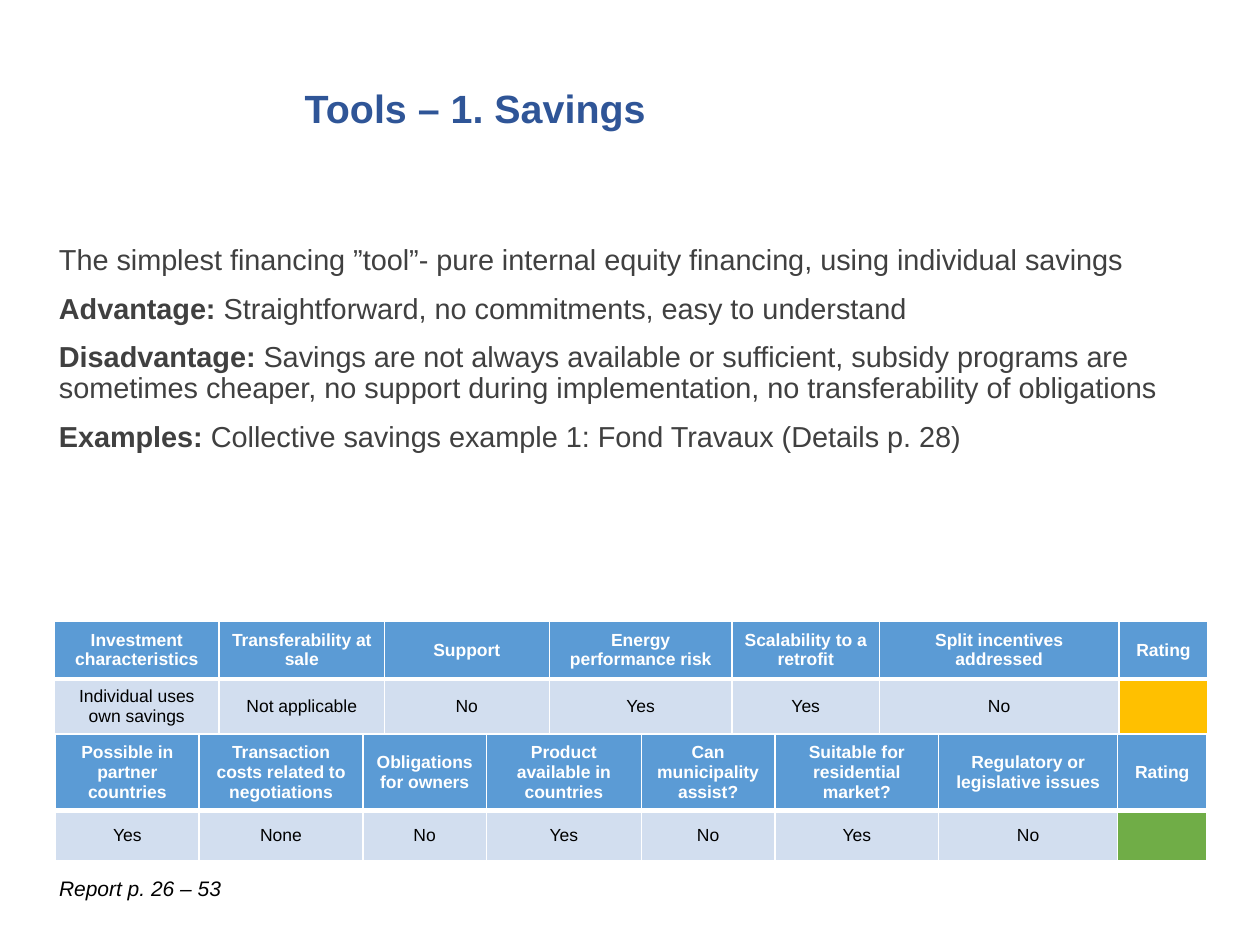
from dataclasses import dataclass

from lxml.etree import SubElement
from pptx import Presentation
from pptx.dml.color import RGBColor
from pptx.enum.text import MSO_ANCHOR, PP_ALIGN
from pptx.oxml.ns import qn
from pptx.util import Inches, Pt

WHITE = "FFFFFF"
BLACK = "000000"
HEADER_FILL = "5B9BD5"
BODY_FILL = "D2DEEF"

TITLE_FORMAT = {"size": Pt(22.5), "name": "Arial", "bold": True}
BODY_FORMAT = {"size": Pt(16.5), "name": "Arial"}
REPORT_FORMAT = {"size": Pt(12), "name": "Arial", "italic": True}
CELL_FORMAT = {"size": Pt(10), "name": "Arial"}


@dataclass
class Entry:
    text: str
    label: str = ""


@dataclass
class TextBlock:
    left: float
    top: float
    width: float
    height: float
    entries: list[Entry]
    style: dict
    color: str
    line_spacing: float = 1.0
    anchor: MSO_ANCHOR = MSO_ANCHOR.TOP


@dataclass
class RatingTable:
    left: float
    top: float
    widths: list[float]
    heights: list[float]
    headers: list[str]
    values: list[str]
    rating_color: str


TEXT_BLOCKS = [
    TextBlock(
        0.37, 1.9, 8.94, 4.3,
        [
            Entry("The simplest financing ”tool”- pure internal equity financing, using individual savings"),
            Entry("Straightforward, no commitments, easy to understand", "Advantage: "),
            Entry(
                "Savings are not always available or sufficient, subsidy programs are sometimes cheaper, "
                "no support during implementation, no transferability of obligations",
                "Disadvantage: ",
            ),
            Entry("Collective savings example 1: Fond Travaux (Details p. 28)", "Examples: "),
        ],
        BODY_FORMAT, "404040", 0.9,
    ),
    TextBlock(2.32, 0.6, 6.28, 0.56, [Entry("Tools – 1. Savings")],
              TITLE_FORMAT, "2F5597", 0.9, MSO_ANCHOR.MIDDLE),
    TextBlock(0.37, 6.9, 2.32, 0.3, [Entry("Report p. 26 – 53")], REPORT_FORMAT, BLACK),
]

RATING_TABLES = [
    RatingTable(
        0.43, 4.93, [1.31, 1.31, 1.31, 1.45, 1.17, 1.9, 0.71], [0.46, 0.43],
        ["Investment characteristics", "Transferability at sale", "Support", "Energy performance risk",
         "Scalability to a retrofit", "Split incentives addressed", "Rating"],
        ["Individual uses own savings", "Not applicable", "No", "Yes", "Yes", "No", ""],
        "FFC000",
    ),
    RatingTable(
        0.44, 5.83, [1.14, 1.3, 0.98, 1.23, 1.06, 1.3, 1.42, 0.71], [0.6, 0.35],
        ["Possible in partner countries", "Transaction costs related to negotiations",
         "Obligations for owners", "Product available in countries", "Can municipality assist?",
         "Suitable for residential market?", "Regulatory or legislative issues", "Rating"],
        ["Yes", "None", "No", "Yes", "No", "Yes", "No", ""],
        "70AD47",
    ),
]


def rgb(value: str) -> RGBColor:
    return RGBColor.from_string(value)


def add_run(paragraph, text: str, style: dict, color: str) -> None:
    run = paragraph.add_run()
    run.text = text
    for attribute, value in style.items():
        setattr(run.font, attribute, value)
    run.font.color.rgb = rgb(color)


def draw_text(slide, block: TextBlock) -> None:
    shape = slide.shapes.add_textbox(
        Inches(block.left), Inches(block.top), Inches(block.width), Inches(block.height)
    )
    frame = shape.text_frame
    frame.word_wrap = True
    frame.vertical_anchor = block.anchor
    for index, entry in enumerate(block.entries):
        paragraph = frame.add_paragraph() if index else frame.paragraphs[0]
        paragraph.line_spacing = block.line_spacing
        if index:
            paragraph.space_before = Pt(10)
        if entry.label:
            add_run(paragraph, entry.label, block.style | {"bold": True}, block.color)
        add_run(paragraph, entry.text, block.style, block.color)


def set_borders(cell, bottom_width: float) -> None:
    properties = cell._tc.get_or_add_tcPr()
    for position, (side, width) in enumerate(
        {"lnL": 1, "lnR": 1, "lnT": 1, "lnB": bottom_width}.items()
    ):
        line = SubElement(properties, qn(f"a:{side}"), w=str(Pt(width)))
        fill = SubElement(line, qn("a:solidFill"))
        SubElement(fill, qn("a:srgbClr"), val=WHITE)
        properties.insert(position, line)


def draw_cell(cell, text: str, fill: str, is_header: bool) -> None:
    cell.fill.solid()
    cell.fill.fore_color.rgb = rgb(fill)
    cell.vertical_anchor = MSO_ANCHOR.MIDDLE
    paragraph = cell.text_frame.paragraphs[0]
    paragraph.alignment = PP_ALIGN.CENTER
    add_run(paragraph, text, CELL_FORMAT | {"bold": is_header}, WHITE if is_header else BLACK)
    set_borders(cell, 3 if is_header else 1)


def draw_table(slide, content: RatingTable) -> None:
    table = slide.shapes.add_table(
        2, len(content.widths), Inches(content.left), Inches(content.top),
        Inches(sum(content.widths)), Inches(sum(content.heights)),
    ).table
    for row, height in zip(table.rows, content.heights):
        row.height = Inches(height)
    for index, width in enumerate(content.widths):
        table.columns[index].width = Inches(width)
        is_rating = index == len(content.widths) - 1
        draw_cell(table.cell(0, index), content.headers[index], HEADER_FILL, True)
        draw_cell(table.cell(1, index), content.values[index],
                  content.rating_color if is_rating else BODY_FILL, False)


def main() -> None:
    presentation = Presentation()
    presentation.slide_width = Inches(10)
    presentation.slide_height = Inches(7.5)
    slide = presentation.slides.add_slide(presentation.slide_layouts[6])
    for block in TEXT_BLOCKS:
        draw_text(slide, block)
    for content in RATING_TABLES:
        draw_table(slide, content)
    presentation.save("out.pptx")


if __name__ == "__main__":
    main()
